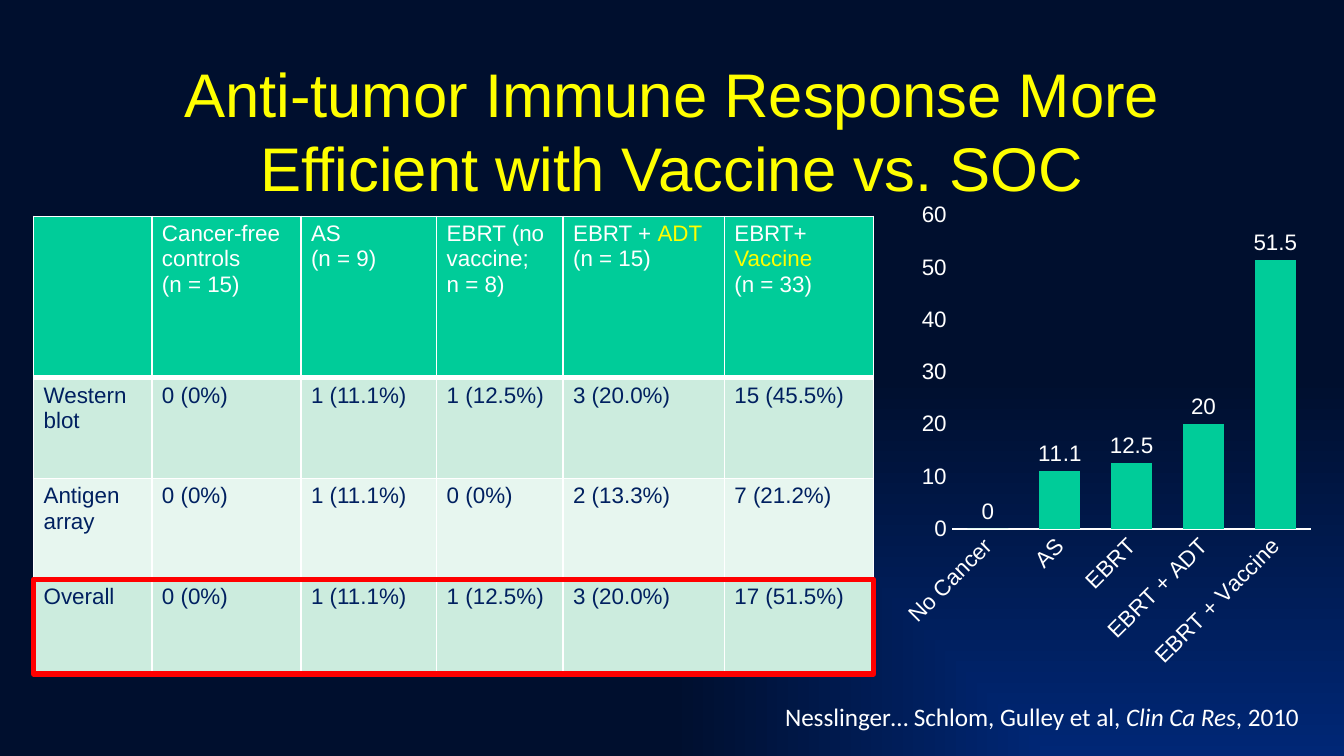
from lxml import etree
from pptx import Presentation
from pptx.chart.data import CategoryChartData
from pptx.dml.color import RGBColor
from pptx.enum import chart as ch, shapes, text
from pptx.oxml.ns import qn
from pptx.util import Pt

WHITE, YELLOW, NAVY, GREEN, RED = "FFFFFF", "FFFF00", "002060", "00CC99", "FF0000"
MINT, PALE = "CCECDE", "E7F6EF"

HEADERS = [
    [],
    ["Cancer-free controls", "(n = 15)"],
    ["AS", "(n = 9)"],
    ["EBRT (no vaccine;", "n = 8)"],
    [["EBRT + ", ("ADT", YELLOW)], "(n = 15)"],
    [["EBRT+ ", ("Vaccine", YELLOW)], "(n = 33)"],
]
RESULTS = [
    ["Western blot", "0 (0%)", "1 (11.1%)", "1 (12.5%)", "3 (20.0%)", "15 (45.5%)"],
    ["Antigen array", "0 (0%)", "1 (11.1%)", "0 (0%)", "2 (13.3%)", "7 (21.2%)"],
    ["Overall", "0 (0%)", "1 (11.1%)", "1 (12.5%)", "3 (20.0%)", "17 (51.5%)"],
]
COL_WIDTHS = [63.4, 79.9, 72.7, 67.7, 86.4, 79.9]
ROW_HEIGHTS = [86.4, 54, 54, 49.7]
RESPONSE_RATES = {"No Cancer": 0, "AS": 11.1, "EBRT": 12.5, "EBRT + ADT": 20,
                  "EBRT + Vaccine": 51.5}


def rgb(value):
    return RGBColor.from_string(value)


def set_font(font, size=12, color=WHITE, name="Arial", italic=None):
    font.size, font.name, font.italic = Pt(size), name, italic
    font.color.rgb = rgb(color)


def add_run(p, content, color=WHITE, **fmt):
    r = p.add_run()
    r.text = content
    set_font(r.font, color=color, **fmt)


def write(tf, paragraphs, color=WHITE, **fmt):
    """Each paragraph is a string or a list of strings and (text, color) runs."""
    for i, runs in enumerate(paragraphs):
        p = tf.paragraphs[0] if i == 0 else tf.add_paragraph()
        for run in [runs] if isinstance(runs, str) else runs:
            content, run_color = (run, color) if isinstance(run, str) else run
            add_run(p, content, run_color, **fmt)


def set_background(s):
    """Rectangular gradient that is brightest in the bottom right corner."""
    fill = s.background.fill
    fill.gradient()
    for stop, position, color in zip(fill.gradient_stops, (0, 1), ("002776", "000F2E")):
        stop.position = position
        stop.color.rgb = rgb(color)
    grad = s.element.find(".//" + qn("a:gradFill"))
    grad.remove(grad.find(qn("a:lin")))
    path = etree.SubElement(grad, qn("a:path"), path="rect")
    etree.SubElement(path, qn("a:fillToRect"), l="100000", t="100000")


def set_title(s, content):
    sp = s.shapes.title
    sp.left, sp.top, sp.width, sp.height = Pt(54), Pt(36), Pt(612), Pt(67.5)
    tf = sp.text_frame
    tf.vertical_anchor = text.MSO_ANCHOR.MIDDLE
    tf.auto_size = text.MSO_AUTO_SIZE.NONE
    write(tf, [content], YELLOW, size=33)
    tf.paragraphs[0].alignment = text.PP_ALIGN.CENTER


def set_borders(cell, bottom):
    tcPr = cell._tc.get_or_add_tcPr()
    widths = {"lnL": 1, "lnR": 1, "lnT": 1, "lnB": bottom}
    for i, (side, width) in enumerate(widths.items()):
        ln = etree.Element(qn("a:" + side), w=str(Pt(width)))
        fill = etree.SubElement(ln, qn("a:solidFill"))
        etree.SubElement(fill, qn("a:srgbClr"), val=WHITE)
        tcPr.insert(i, ln)


def fill_cell(cell, paragraphs, fill, color, bottom=1):
    cell.fill.solid()
    cell.fill.fore_color.rgb = rgb(fill)
    cell.margin_left = cell.margin_right = Pt(5.4)
    cell.margin_top = cell.margin_bottom = Pt(2.7)
    write(cell.text_frame, paragraphs, color)
    set_borders(cell, bottom)


def add_results_table(s):
    table = s.shapes.add_table(len(ROW_HEIGHTS), len(COL_WIDTHS), Pt(18), Pt(116),
                               Pt(sum(COL_WIDTHS)), Pt(sum(ROW_HEIGHTS))).table
    for column, width in zip(table.columns, COL_WIDTHS):
        column.width = Pt(width)
    for row, height in zip(table.rows, ROW_HEIGHTS):
        row.height = Pt(height)
    for c, header in enumerate(HEADERS):
        fill_cell(table.cell(0, c), header, GREEN, WHITE, bottom=3)
    for r, values in enumerate(RESULTS, 1):
        for c, value in enumerate(values):
            fill_cell(table.cell(r, c), [value], MINT if r % 2 else PALE, NAVY)


def add_highlight(s):
    sp = s.shapes.add_shape(shapes.MSO_SHAPE.RECTANGLE, Pt(18), Pt(310.5), Pt(450), Pt(50.5))
    sp.shadow.inherit = False
    sp.fill.background()
    sp.line.color.rgb = rgb(RED)
    sp.line.width = Pt(3)


def add_citation(s):
    sp = s.shapes.add_textbox(Pt(413.5), Pt(372.2), Pt(294.5), Pt(23.8))
    tf = sp.text_frame
    tf.word_wrap = False
    tf.auto_size = text.MSO_AUTO_SIZE.SHAPE_TO_FIT_TEXT
    for content, italic in [("Nesslinger… Schlom, Gulley et al, ", False),
                            ("Clin Ca Res", True), (", 2010", False)]:
        add_run(tf.paragraphs[0], content, size=13.5, name="Calibri", italic=italic)


def format_axis(axis):
    axis.has_major_gridlines = False
    axis.major_tick_mark = axis.minor_tick_mark = ch.XL_TICK_MARK.NONE
    set_font(axis.tick_labels.font)


def add_response_chart(s):
    data = CategoryChartData()
    data.categories = list(RESPONSE_RATES)
    data.add_series("Series 1", list(RESPONSE_RATES.values()))
    chart = s.shapes.add_chart(ch.XL_CHART_TYPE.COLUMN_CLUSTERED, Pt(479.5), Pt(103.7),
                               Pt(227.5), Pt(259.2), data).chart
    chart.has_legend = chart.has_title = False
    set_font(chart.font, size=10)

    categories, values = chart.category_axis, chart.value_axis
    for axis in (categories, values):
        format_axis(axis)
    categories.format.line.color.rgb = rgb(WHITE)
    categories.format.line.width = Pt(0.75)
    categories._element.find(".//" + qn("a:bodyPr")).set("rot", "-2700000")
    values.format.line.fill.background()
    values.minimum_scale, values.maximum_scale, values.major_unit = 0, 60, 10

    plot = chart.plots[0]
    plot.gap_width = 75
    plot.vary_by_categories = False
    series = plot.series[0]
    series.format.fill.solid()
    series.format.fill.fore_color.rgb = rgb(GREEN)
    labels = series.data_labels
    labels.show_value = True
    labels.position = ch.XL_LABEL_POSITION.OUTSIDE_END
    set_font(labels.font)


def main():
    prs = Presentation()
    prs.slide_width, prs.slide_height = Pt(720), Pt(405)
    s = prs.slides.add_slide(prs.slide_layouts[5])
    set_background(s)
    set_title(s, "Anti-tumor Immune Response More Efficient with Vaccine vs. SOC")
    add_results_table(s)
    add_citation(s)
    add_highlight(s)
    add_response_chart(s)
    prs.save("out.pptx")


if __name__ == "__main__":
    main()
